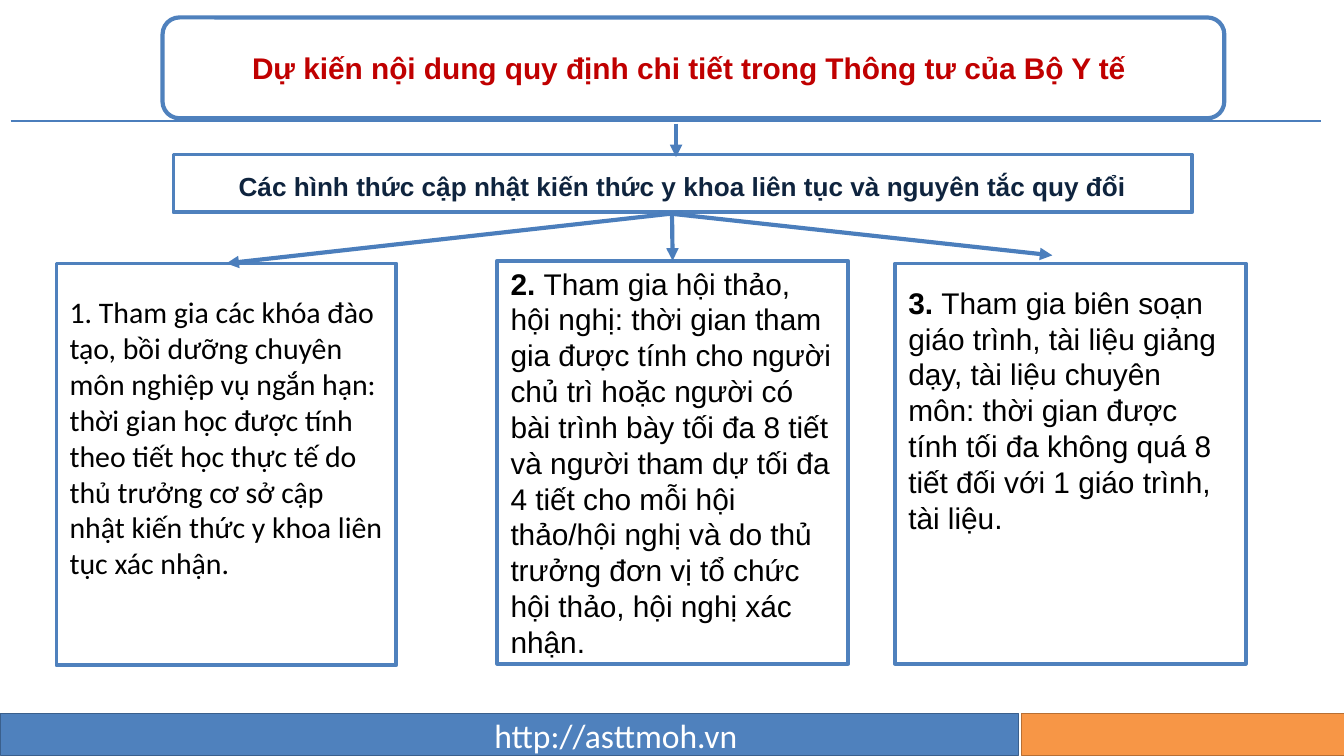
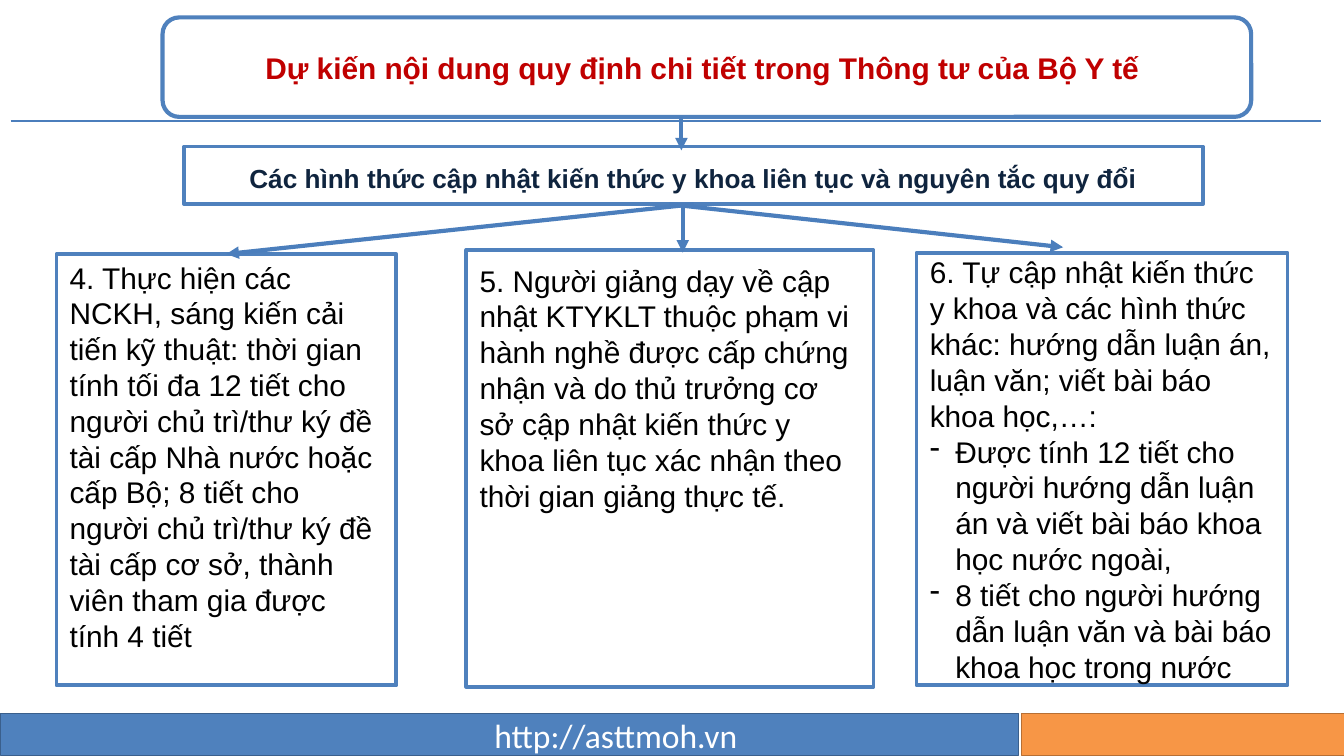
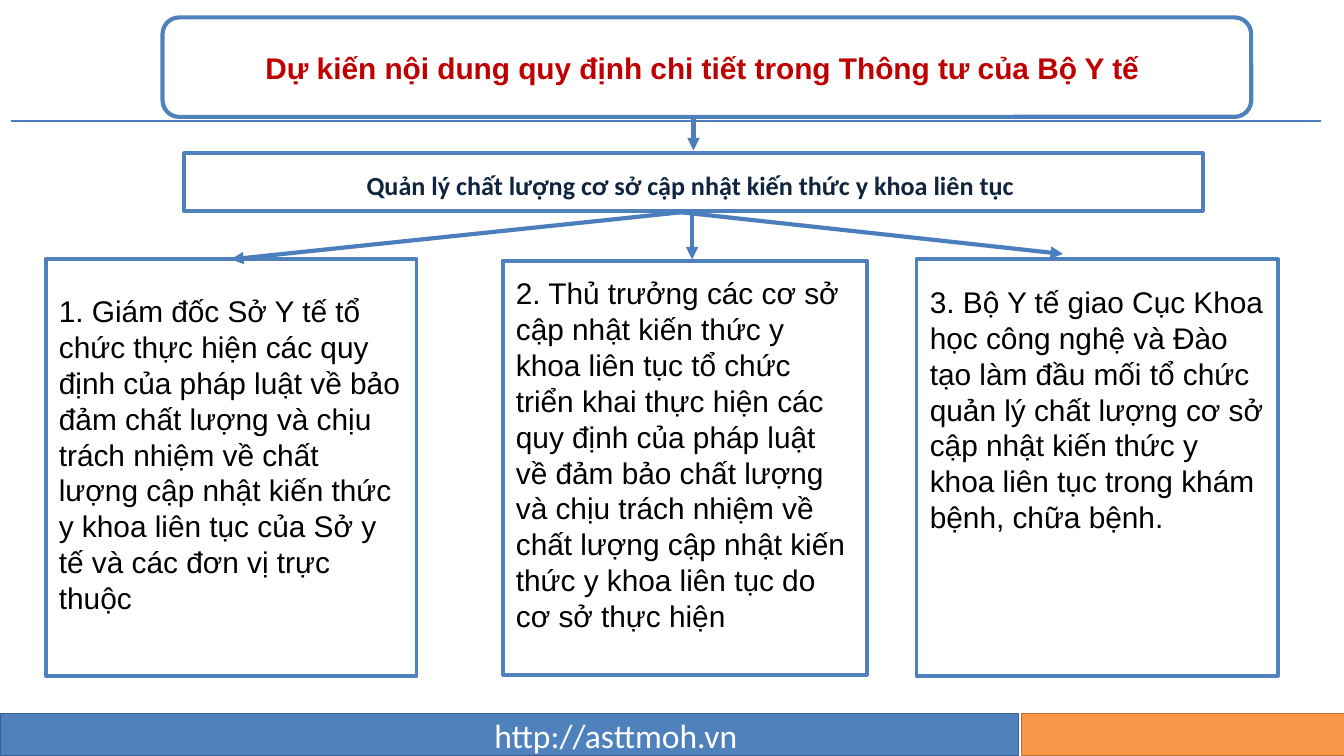
from lxml import etree
from pptx import Presentation
from pptx.dml.color import RGBColor
from pptx.enum import shapes, text
from pptx.oxml import ns
from pptx.util import Inches, Pt

BLUE, BLUE_EDGE, ORANGE, ORANGE_EDGE = "4F81BD", "3A5F8C", "F79646", "B76F34"
ARROW, RED, NAVY, BLACK, WHITE = "4B7EBC", "C00000", "0F243E", "000000", "FFFFFF"
INSET = 0.05

TITLE = "Dự kiến nội dung quy định chi tiết trong Thông tư của Bộ Y tế "
FORMS = "Các hình thức cập nhật kiến thức y khoa liên tục và nguyên tắc quy đổi"
SITE = "http://asttmoh.vn"

# Boxes are left, top, width, height; stem and middle are arrow positions.
# A card's spare is the room kept free below its text.
# A paragraph is (bold lead, text), with "-" as a third item for a dash.
SLIDES = [
    dict(title=(1.21, 0.13, 7.9, 0.75), topic=(1.29, 1.15, 7.58, 0.43),
         topic_text=FORMS, topic_font="Arial", stem=(5.03, 0.92), middle=5.0,
         cards=[
             dict(box=(0.42, 1.96, 2.53, 2.99), spare=0.4, font="Calibri", paragraphs=[
                 ("", "1. Tham gia các khóa đào tạo, bồi dưỡng chuyên môn nghiệp vụ ngắn hạn: "
                  "thời gian học được tính theo tiết học thực tế do thủ trưởng cơ sở cập nhật "
                  "kiến thức y khoa liên tục xác nhận.")]),
             dict(box=(3.7, 1.94, 2.61, 3), spare=0, paragraphs=[
                 ("2. ", "Tham gia hội thảo, hội nghị: thời gian tham gia được tính cho người "
                  "chủ trì hoặc người có bài trình bày tối đa 8 tiết và người tham dự tối đa "
                  "4 tiết cho mỗi hội thảo/hội nghị và do thủ trưởng đơn vị tổ chức hội thảo, "
                  "hội nghị xác nhận.")]),
             dict(box=(6.66, 1.96, 2.61, 2.98), spare=0.8, paragraphs=[
                 ("3. ", "Tham gia biên soạn giáo trình, tài liệu giảng dạy, tài liệu chuyên "
                  "môn: thời gian được tính tối đa không quá 8 tiết đối với 1 giáo trình, "
                  "tài liệu.")]),
         ]),
    dict(title=(1.21, 0.13, 8.1, 0.74), topic=(1.37, 1.09, 7.58, 0.43),
         topic_text=FORMS, topic_font="Arial", stem=(5.07, 0.87), middle=5.08,
         cards=[
             dict(box=(0.42, 1.89, 2.53, 3.21), spare=0.2, paragraphs=[
                 ("", "4. Thực hiện các NCKH, sáng kiến cải tiến kỹ thuật: thời gian tính tối "
                  "đa 12 tiết cho người chủ trì/thư ký đề tài cấp Nhà nước hoặc cấp Bộ; 8 tiết "
                  "cho người chủ trì/thư ký đề tài cấp cơ sở, thành viên tham gia được tính "
                  "4 tiết")]),
             dict(box=(3.47, 1.86, 3.03, 3.25), spare=1.2, paragraphs=[
                 ("", "5. Người giảng dạy về cập nhật KTYKLT thuộc phạm vi hành nghề được cấp "
                  "chứng nhận và do thủ trưởng cơ sở cập nhật kiến thức y khoa liên tục xác "
                  "nhận theo thời gian giảng thực tế.")]),
             dict(box=(6.82, 1.88, 2.76, 3.22), spare=0, paragraphs=[
                 ("", "6. Tự cập nhật kiến thức y khoa và các hình thức khác: hướng dẫn luận "
                  "án, luận văn; viết bài báo khoa học,…:"),
                 ("", "Được tính 12 tiết cho người hướng dẫn luận án và viết bài báo khoa học "
                  "nước ngoài,", "-"),
                 ("", "8 tiết cho người hướng dẫn luận văn và bài báo khoa học trong nước", "-")]),
         ]),
    dict(title=(1.21, 0.13, 8.1, 0.74), topic=(1.37, 1.14, 7.58, 0.43),
         topic_text="Quản lý chất lượng cơ sở cập nhật kiến thức y khoa liên tục ",
         topic_font="Calibri", stem=(5.16, 0.87), middle=5.15,
         cards=[
             dict(box=(0.34, 1.93, 2.76, 3.1), spare=0.2, paragraphs=[
                 ("", "1. Giám đốc Sở Y tế tổ chức thực hiện các quy định của pháp luật về bảo "
                  "đảm chất lượng và chịu trách nhiệm về chất lượng cập nhật kiến thức y khoa "
                  "liên tục của Sở y tế và các đơn vị trực thuộc")]),
             dict(box=(3.74, 1.94, 2.71, 3.08), spare=0.2, paragraphs=[
                 ("", "2. Thủ trưởng các cơ sở cập nhật kiến thức y khoa liên tục tổ chức triển "
                  "khai thực hiện các quy định của pháp luật về đảm bảo chất lượng và chịu "
                  "trách nhiệm về chất lượng cập nhật kiến thức y khoa liên tục do cơ sở thực "
                  "hiện")]),
             dict(box=(6.82, 1.93, 2.69, 3.1), spare=0.87, paragraphs=[
                 ("", "3. Bộ Y tế giao Cục Khoa học công nghệ và Đào tạo làm đầu mối tổ chức "
                  "quản lý chất lượng cơ sở cập nhật kiến thức y khoa liên tục trong khám "
                  "bệnh, chữa bệnh.")]),
         ]),
]


def rgb(color):
    return RGBColor.from_string(color)


def add_box(slide, box, fill=WHITE, edge=BLUE, weight=2.0, kind="RECTANGLE"):
    shape = slide.shapes.add_shape(shapes.MSO_SHAPE[kind], *map(Inches, box))
    shape.shadow.inherit = False
    shape.fill.solid()
    shape.fill.fore_color.rgb = rgb(fill)
    shape.line.color.rgb = rgb(edge)
    shape.line.width = Pt(weight)
    return shape


def add_run(paragraph, words, font, size, color, bold=False):
    run = paragraph.add_run()
    run.text = words
    run.font.name, run.font.size, run.font.bold = font, Pt(size), bold
    run.font.color.rgb = rgb(color)


def set_frame(shape, top=INSET, bottom=INSET):
    frame = shape.text_frame
    frame.word_wrap = True
    frame.vertical_anchor = text.MSO_ANCHOR.MIDDLE
    frame.margin_top, frame.margin_bottom = Inches(top), Inches(bottom)
    return frame


def add_heading(shape, words, font, size, color, top=INSET):
    paragraph = set_frame(shape, top).paragraphs[0]
    paragraph.alignment = text.PP_ALIGN.CENTER
    add_run(paragraph, words, font, size, color, bold=True)


def add_line(slide, start, end, weight=2.25, arrow=True):
    line = slide.shapes.add_connector(
        shapes.MSO_CONNECTOR.STRAIGHT, *map(Inches, start + end))
    line.line.color.rgb = rgb(ARROW)
    line.line.width = Pt(weight)
    if arrow:
        etree.SubElement(line.line._get_or_add_ln(), ns.qn("a:tailEnd"), type="triangle")
    etree.SubElement(line._element.spPr, ns.qn("a:effectLst"))
    return line


def add_frame(slide):
    # Footer bands, site address and the rule under the title
    add_box(slide, (0, 5.31, 7.58, 0.31), BLUE, BLUE_EDGE, 0.25)
    add_box(slide, (7.6, 5.31, 2.4, 0.31), ORANGE, ORANGE_EDGE, 0.25)
    site = slide.shapes.add_textbox(*map(Inches, (3.58, 5.27, 2.04, 0.4)))
    site.text_frame.word_wrap = False
    add_run(site.text_frame.paragraphs[0], SITE, "Calibri", 18, WHITE)
    add_line(slide, (0.08, 0.9), (9.83, 0.9), 1.5, arrow=False)


def add_card(slide, card):
    shape = add_box(slide, card["box"])
    frame = set_frame(shape, bottom=INSET + card["spare"])
    for number, (lead, words, *dash) in enumerate(card["paragraphs"]):
        paragraph = frame.add_paragraph() if number else frame.paragraphs[0]
        paragraph.alignment = text.PP_ALIGN.LEFT
        if dash:
            properties = paragraph._p.get_or_add_pPr()
            properties.set("marL", str(Inches(0.19)))
            properties.set("indent", str(-Inches(0.19)))
            etree.SubElement(properties, ns.qn("a:buFontTx"))
            etree.SubElement(properties, ns.qn("a:buChar"), char=dash[0])
        font = card.get("font", "Arial")
        if lead:
            add_run(paragraph, lead, font, 16, BLACK, bold=True)
        add_run(paragraph, words, font, 16, BLACK)
    return shape


def add_arrows(slide, content, topic, cards):
    left, top, width, height = content["topic"]
    center, base = left + width / 2, top + height
    stem_x, stem_y = content["stem"]
    middle = content["middle"]

    # Left branch joins the topic to the first card
    left_branch = add_line(slide, (center, base), (1.68, base + 0.37))
    left_branch.begin_connect(topic, 2)
    left_branch.end_connect(cards[0], 0)

    add_line(slide, (stem_x, stem_y), (stem_x, stem_y + 0.25))
    add_line(slide, (center - 0.18, base), (center + 2.75, base + 0.32))

    # Middle branch joins its card only where it meets the card's centre
    middle_branch = add_line(slide, (middle, base), (middle, base + 0.36))
    card_left, _, card_width, _ = content["cards"][1]["box"]
    if abs(card_left + card_width / 2 - middle) < 0.02:
        middle_branch.end_connect(cards[1], 0)


def main():
    deck = Presentation()
    deck.slide_width = Inches(10)
    deck.slide_height = deck.slide_width * 9 // 16
    for content in SLIDES:
        slide = deck.slides.add_slide(deck.slide_layouts[6])
        add_frame(slide)
        title = add_box(slide, content["title"], weight=2.25, kind="ROUNDED_RECTANGLE")
        add_heading(title, TITLE, "Arial", 16, RED)
        topic = add_box(slide, content["topic"])
        add_heading(topic, content["topic_text"], content["topic_font"], 14, NAVY, top=0.09)
        cards = [add_card(slide, card) for card in content["cards"]]
        add_arrows(slide, content, topic, cards)
    deck.save("out.pptx")


if __name__ == "__main__":
    main()
